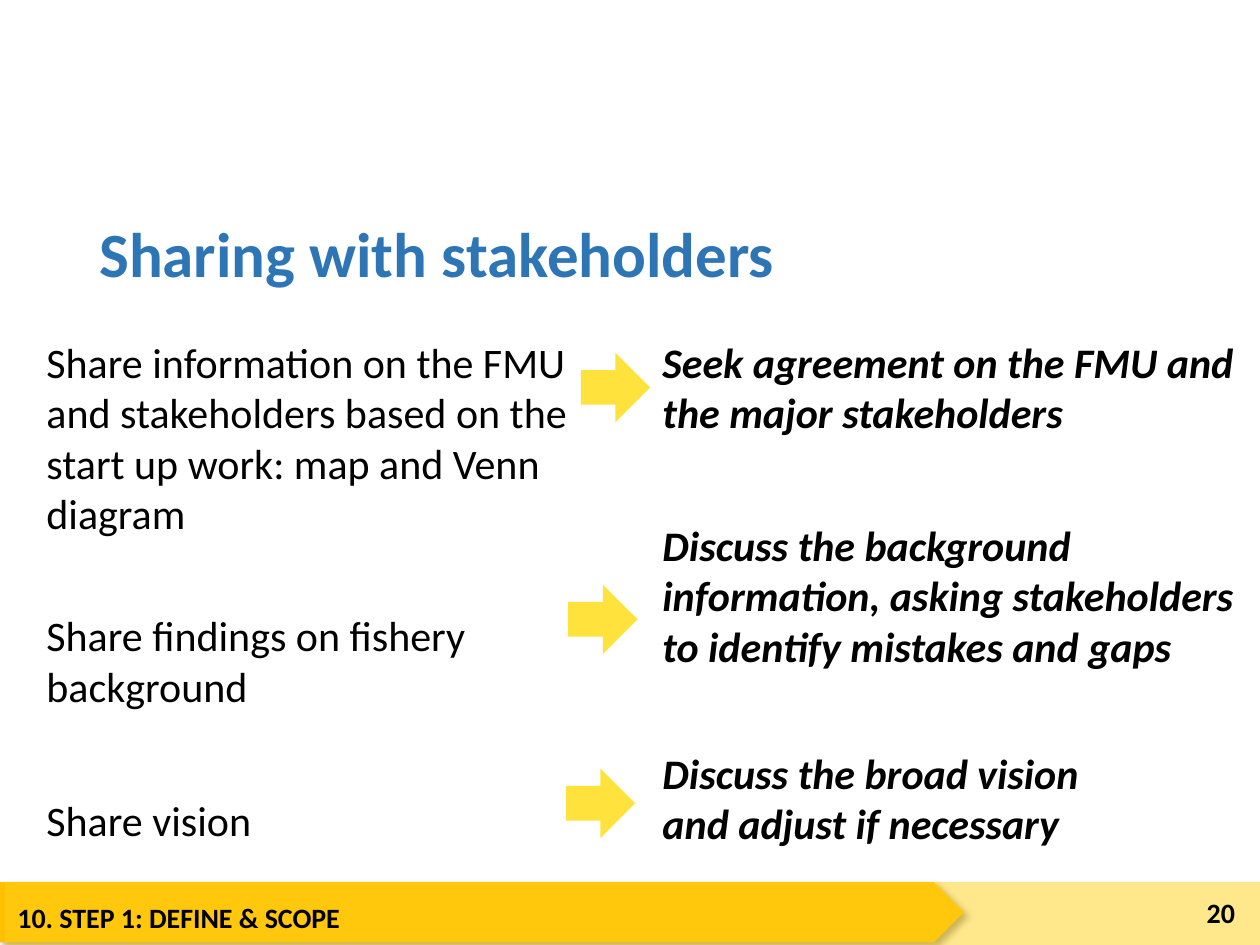
import pptx
import pptx.util
import pptx.dml.color
import pptx.enum.shapes
import pptx.enum.text
import pptx.oxml
import pptx.oxml.ns
from lxml import etree

RGBColor = pptx.dml.color.RGBColor
MSO_SHAPE = pptx.enum.shapes.MSO_SHAPE
PP_ALIGN = pptx.enum.text.PP_ALIGN
MSO_ANCHOR = pptx.enum.text.MSO_ANCHOR

BLACK = RGBColor(0x00, 0x00, 0x00)
BLUE = RGBColor(0x2E, 0x75, 0xB6)
AMBER = RGBColor(0xFF, 0xC0, 0x00)
GOLD = RGBColor(0xFF, 0xD0, 0x1B)
YELLOW = RGBColor(0xFF, 0xE2, 0x3C)

COLUMNS, ROWS = 100, 75


class SlideBuilder:
    """Places styled elements on a grid of 100 columns and 75 rows."""

    font_name = "Calibri"

    def __init__(self, presentation):
        self.cell_width = presentation.slide_width / COLUMNS
        self.cell_height = presentation.slide_height / ROWS
        self.slide = presentation.slides.add_slide(presentation.slide_layouts[6])

    def box(self, column, row, columns, rows):
        return (
            round(column * self.cell_width),
            round(row * self.cell_height),
            round(columns * self.cell_width),
            round(rows * self.cell_height),
        )

    def shape(self, kind, area, color):
        shape = self.slide.shapes.add_shape(kind, *self.box(*area))
        shape.shadow.inherit = False
        shape.fill.solid()
        shape.fill.fore_color.rgb = color
        shape.line.fill.background()
        return shape

    def set_transparency(self, shape, opacity):
        color = shape.fill._xPr.find(".//" + pptx.oxml.ns.qn("a:srgbClr"))
        etree.SubElement(color, pptx.oxml.ns.qn("a:alpha"), val=str(opacity * 1000))

    def add_shadow(self, shape, blur, distance, angle, opacity):
        effects = shape._element.spPr.find(pptx.oxml.ns.qn("a:effectLst"))
        effects.append(pptx.oxml.parse_xml(
            f'<a:outerShdw {pptx.oxml.ns.nsdecls("a")} blurRad="{pptx.util.Pt(blur)}" '
            f'dist="{pptx.util.Pt(distance)}" dir="{angle * 60000}" rotWithShape="0">'
            f'<a:srgbClr val="{BLACK}"><a:alpha val="{opacity * 1000}"/></a:srgbClr>'
            f'</a:outerShdw>'))

    def text(self, area, paragraphs, size, color=BLACK, bold=False, italic=False,
             align=PP_ALIGN.LEFT, anchor=MSO_ANCHOR.TOP, line_spacing=None):
        """Each paragraph is a pair of wording and space after in points."""
        text_frame = self.slide.shapes.add_textbox(*self.box(*area)).text_frame
        text_frame.word_wrap = True
        text_frame.vertical_anchor = anchor
        for index, (wording, space_after) in enumerate(paragraphs):
            paragraph = text_frame.add_paragraph() if index else text_frame.paragraphs[0]
            paragraph.text = wording
            paragraph.alignment = align
            paragraph.space_after = pptx.util.Pt(space_after)
            if line_spacing:
                paragraph.line_spacing = line_spacing
            for run in paragraph.runs:
                run.font.name = self.font_name
                run.font.size = pptx.util.Pt(size)
                run.font.bold = bold
                run.font.italic = italic
                run.font.color.rgb = color


def main():
    presentation = pptx.Presentation()
    presentation.slide_width = pptx.util.Inches(10)
    presentation.slide_height = pptx.util.Inches(7.5)
    builder = SlideBuilder(presentation)

    # Footer band with the chapter name
    chapter_tab = builder.shape(MSO_SHAPE.PENTAGON, (0, 70, 76.5, 4.8), AMBER)
    builder.add_shadow(chapter_tab, blur=4, distance=3, angle=45, opacity=40)
    band = builder.shape(MSO_SHAPE.RECTANGLE, (0.4, 70, 99.6, 5), GOLD)
    builder.set_transparency(band, 50)
    builder.text((0.4, 71, 73.5, 4.1), [("10. STEP 1: DEFINE & SCOPE", 0)], 16, bold=True)

    # Title
    builder.text((6.9, 16.3, 86.2, 8.2), [("Sharing with stakeholders", 0)], 36, BLUE,
                 bold=True, anchor=MSO_ANCHOR.MIDDLE, line_spacing=0.9)

    # Slide number
    builder.text((91.7, 70.4, 7.3, 4), [("20", 0)], 16, bold=True,
                 align=PP_ALIGN.RIGHT, anchor=MSO_ANCHOR.MIDDLE)

    # What is shared
    builder.text((2.7, 26.2, 44.5, 40.2), [
        ("Share information on the FMU and stakeholders based on the "
         "start up work: map and Venn diagram", 41),
        ("Share findings on fishery background", 48),
        ("Share vision", 0),
    ], 24)

    # What is asked of stakeholders
    builder.text((51.6, 26.2, 48.4, 42), [
        ("Seek agreement on the FMU and the major stakeholders", 47),
        ("Discuss the background information, asking stakeholders "
         "to identify mistakes and gaps", 44),
        ("Discuss the broad vision\vand adjust if necessary", 0),
    ], 24, bold=True, italic=True)

    # Arrows from sharing to response
    for column, row in ((46.1, 28), (45.1, 46.4), (44.9, 61)):
        builder.shape(MSO_SHAPE.RIGHT_ARROW, (column, row, 5.5, 5.5), YELLOW)

    presentation.save("out.pptx")


if __name__ == "__main__":
    main()
